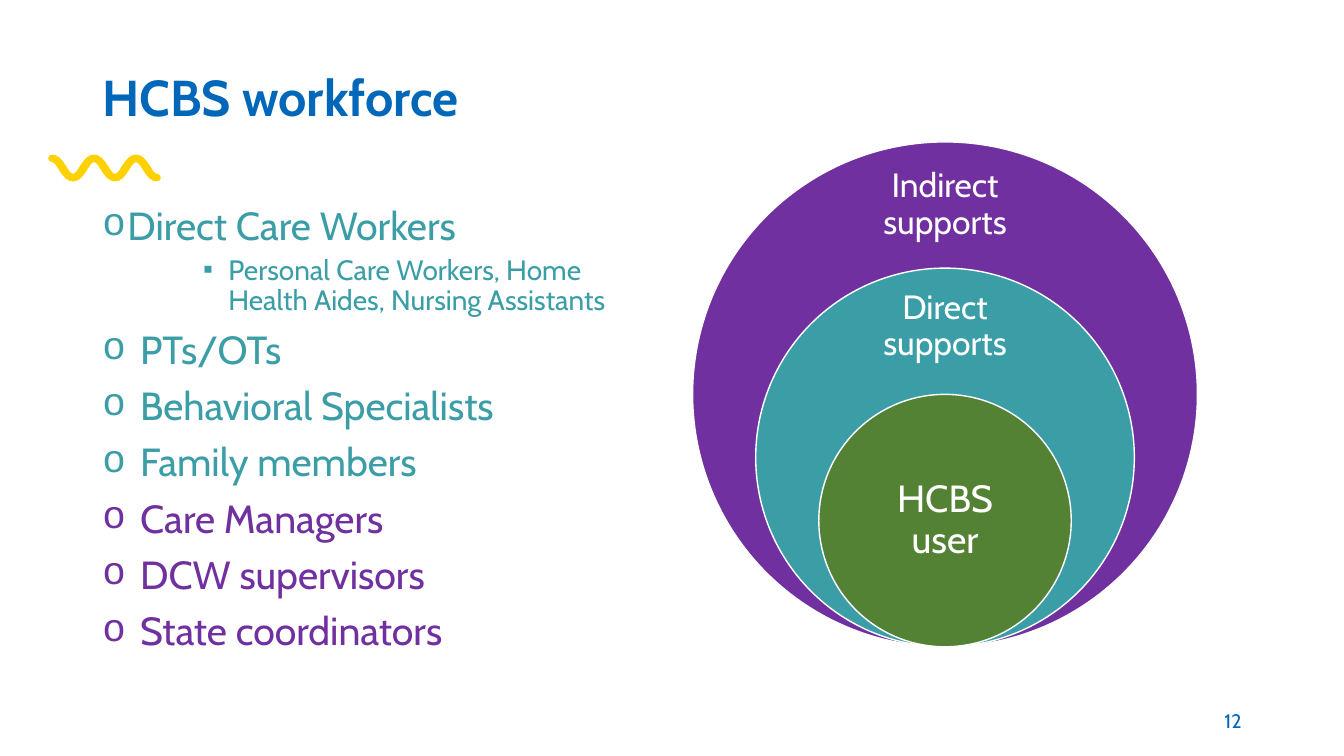
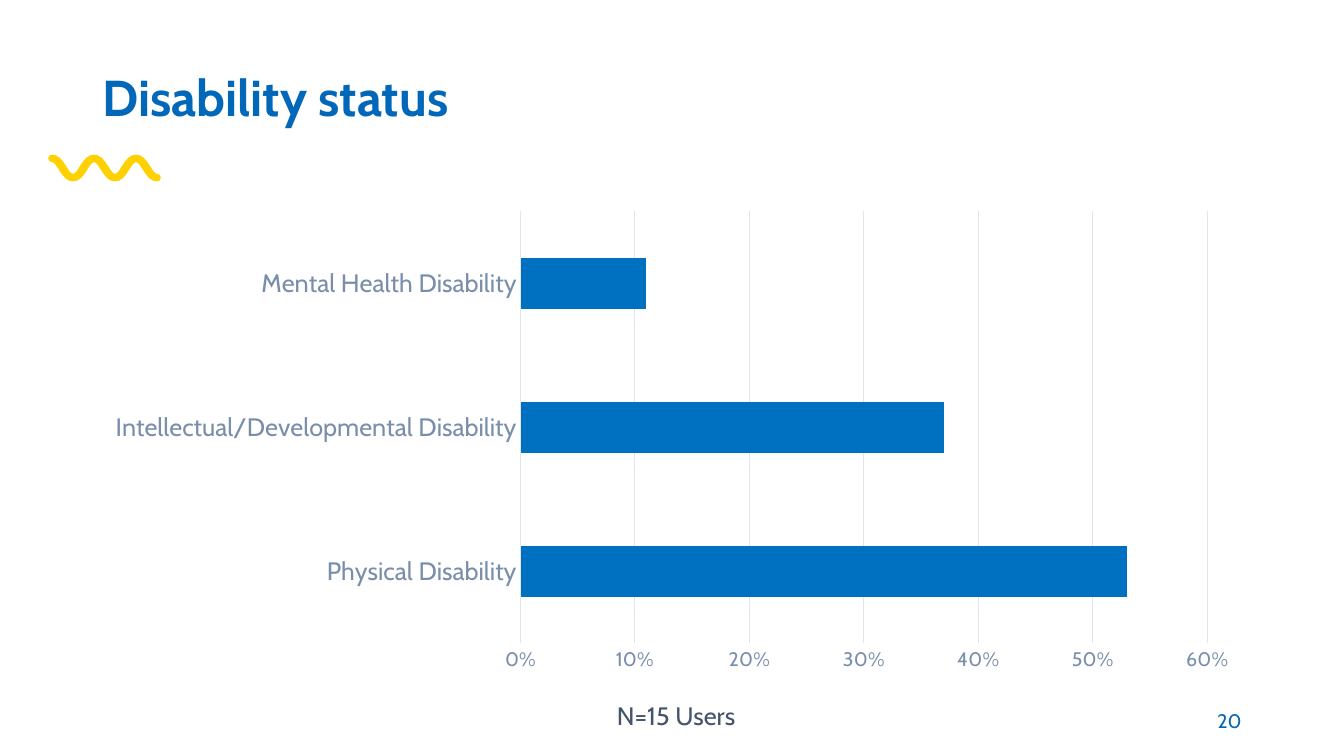
from dataclasses import dataclass

from lxml.etree import SubElement
from pptx import Presentation
from pptx.chart.data import CategoryChartData
from pptx.dml.color import RGBColor
from pptx.enum.chart import XL_CHART_TYPE as CHART, XL_TICK_MARK as TICK
from pptx.enum.shapes import MSO_SHAPE as SHAPE
from pptx.enum.text import MSO_ANCHOR as ANCHOR, PP_ALIGN as ALIGN
from pptx.oxml.ns import qn
from pptx.util import Emu, Inches, Pt

FONT = "Cabin"
BLUE, YELLOW, TEAL, PURPLE, GREEN = "0067B9", "FFD100", "3B9EA7", "7030A0", "548235"
WHITE, SLATE, MUTED, GRID, BAR = "FFFFFF", "44546A", "7A8EAA", "E0E5EB", "0070C0"

SLIDE_W, SLIDE_H = Inches(13.333), Inches(7.5)
ROWS = 18
CELL = SLIDE_H / ROWS

Point = tuple[float, float]


@dataclass(frozen=True)
class Box:
    col: float
    row: float
    cols: float
    rows: float

    def emu(self) -> list[Emu]:
        return [cells(n) for n in (self.col, self.row, self.cols, self.rows)]


@dataclass(frozen=True)
class Bullet:
    text: str
    color: str
    indent: float = 0.9
    hang: float = 0.9
    size: int = 28
    before: int = 10
    char: str = "o"
    char_font: str = "Courier New"


@dataclass(frozen=True)
class Ring:
    label: str
    color: str
    scale: float
    label_top: float
    label_height: float
    size: int
    inset: float


TITLE = Box(2.2, 0.96, 27.6, 2.2)
BODY = Box(2.2, 4.8, 13.78, 11.42)
CHART_AREA = Box(2.2, 4.8, 27.6, 11.42)
NOTE = Box(14.45, 16.56, 12.53, 0.96)
NUMBER = Box(22.6, 16.68, 7.2, 0.96)

BULLETS = [
    Bullet("Direct Care Workers", TEAL, indent=0.6, hang=0.6, before=0),
    Bullet("Personal Care Workers, Home Health Aides, Nursing Assistants", TEAL,
           3, 0.6, 20, 5, "▪", "Arial"),
    Bullet("PTs/OTs", TEAL),
    Bullet("Behavioral Specialists", TEAL),
    Bullet("Family members", TEAL),
    Bullet("Care Managers", PURPLE),
    Bullet("DCW supervisors", PURPLE),
    Bullet("State coordinators", PURPLE),
]

RING_CENTER, RING_BOTTOM, RING_SIZE, LABEL_WIDTH = 22.5, 15.4, 12.02, 4.2
RINGS = [
    Ring("Indirect supports", PURPLE, 1, 0.05, 0.15, 24, 0.45),
    Ring("Direct supports", TEAL, 0.75, 0.06, 0.19, 24, 0.45),
    Ring("HCBS user", GREEN, 0.5, 0.25, 0.5, 27, 0.5),
]

SHARES = {
    "Physical Disability": 0.53,
    "Intellectual/Developmental Disability": 0.37,
    "Mental Health Disability": 0.11,
}


def cells(n: float) -> Emu:
    return Emu(round(n * CELL))


def rgb(color: str) -> RGBColor:
    return RGBColor.from_string(color)


def set_font(font, size: int, color: str, bold: bool = False) -> None:
    font.name, font.size, font.bold = FONT, Pt(size), bold
    font.color.rgb = rgb(color)


def set_line(line, color: str, width: float) -> None:
    line.color.rgb = rgb(color)
    line.width = Pt(width)


def set_fill(sp, color: str) -> None:
    sp.shadow.inherit = False
    sp.fill.solid()
    sp.fill.fore_color.rgb = rgb(color)


def add_text(slide, box: Box, text: str, size: int, color: str, bold: bool = False,
             anchor=ANCHOR.TOP, align=ALIGN.LEFT, spacing: float = 1.0,
             inset: float | None = None) -> None:
    tf = slide.shapes.add_textbox(*box.emu()).text_frame
    tf.word_wrap = True
    tf.vertical_anchor = anchor
    if inset is not None:
        tf.margin_left = tf.margin_right = cells(inset)
        tf.margin_top = tf.margin_bottom = cells(inset)
    p = tf.paragraphs[0]
    p.text = text
    p.alignment, p.line_spacing = align, spacing
    set_font(p.runs[0].font, size, color, bold)


def add_curve_shape(slide, points: list[Point], color: str) -> None:
    start, *rest = [(cells(x), cells(y)) for x, y in points]
    builder = slide.shapes.build_freeform(*start)
    builder.add_line_segments(rest, close=True)
    sp = builder.convert_to_shape()
    outline = sp._element.find(".//" + qn("a:path"))
    lines = outline.findall(qn("a:lnTo"))
    for i in range(0, len(lines), 3):
        curve = SubElement(outline, qn("a:cubicBezTo"))
        for line in lines[i:i + 3]:
            curve.append(line[0])
            outline.remove(line)
    outline.append(outline.find(qn("a:close")))
    set_fill(sp, color)
    sp.line.fill.background()


def add_wave(slide, left: float = 1.24, middle: float = 4, half_wave: float = 0.5,
             height: float = 0.23, radius: float = 0.09, halves: int = 5) -> None:
    wide, narrow = 0.55 * half_wave, 0.25 * half_wave
    cap = radius * 4 / 3

    def edge(side: int, order: range, step: int) -> list[Point]:
        points = []
        for i in order:
            x0, x1 = left + i * half_wave, left + (i + step) * half_wave
            crest = -1 if i % 2 == 0 else 1
            y0 = middle + crest * height + side * radius
            y1 = middle - crest * height + side * radius
            h0, h1 = (wide, narrow) if crest == side else (narrow, wide)
            points += [(x0 + step * h0, y0), (x1 - step * h1, y1), (x1, y1)]
        return points

    right, top, bottom = left + halves * half_wave, middle - height, middle + height
    add_curve_shape(slide, [
        (left, top - radius),
        *edge(-1, range(halves), 1),
        (right + cap, bottom - radius), (right + cap, bottom + radius), (right, bottom + radius),
        *edge(1, range(halves, 0, -1), -1),
        (left - cap, top + radius), (left - cap, top - radius), (left, top - radius),
    ], YELLOW)


def add_slide(prs, title: str, number: int):
    slide = prs.slides.add_slide(prs.slide_layouts[6])
    add_wave(slide)
    add_text(slide, TITLE, title, 36, BLUE, True, ANCHOR.BOTTOM, spacing=0.9)
    add_text(slide, NUMBER, str(number), 14, BLUE, anchor=ANCHOR.MIDDLE, align=ALIGN.RIGHT)
    return slide


def add_bullets(slide, box: Box, bullets: list[Bullet]) -> None:
    tf = slide.shapes.add_textbox(*box.emu()).text_frame
    tf.word_wrap = True
    for i, bullet in enumerate(bullets):
        p = tf.add_paragraph() if i else tf.paragraphs[0]
        p.text = bullet.text
        pPr = p._p.get_or_add_pPr()
        pPr.set("marL", str(cells(bullet.indent)))
        pPr.set("indent", str(-cells(bullet.hang)))
        SubElement(pPr, qn("a:buFont")).set("typeface", bullet.char_font)
        SubElement(pPr, qn("a:buChar")).set("char", bullet.char)
        p.line_spacing = 0.9
        if bullet.before:
            p.space_before = Pt(bullet.before)
        set_font(p.runs[0].font, bullet.size, bullet.color)


def add_ring(slide, ring: Ring) -> None:
    size = RING_SIZE * ring.scale
    top = RING_BOTTOM - size
    circle = Box(RING_CENTER - size / 2, top, size, size)
    sp = slide.shapes.add_shape(SHAPE.OVAL, *circle.emu())
    set_fill(sp, ring.color)
    set_line(sp.line, WHITE, 1)
    label = Box(RING_CENTER - LABEL_WIDTH / 2, top + size * ring.label_top,
                LABEL_WIDTH, size * ring.label_height)
    add_text(slide, label, ring.label, ring.size, WHITE, anchor=ANCHOR.MIDDLE,
             align=ALIGN.CENTER, spacing=0.9, inset=ring.inset)


def add_bar_chart(slide, box: Box, shares: dict[str, float]) -> None:
    data = CategoryChartData(number_format="0%")
    data.categories = list(shares)
    data.add_series("Series 1", list(shares.values()))
    chart = slide.shapes.add_chart(CHART.BAR_CLUSTERED, *box.emu(), data).chart
    chart.has_legend = chart.has_title = False
    set_font(chart.font, 10, SLATE)

    plot = chart.plots[0]
    plot.gap_width = 182
    plot.vary_by_categories = False
    fill = plot.series[0].format.fill
    fill.solid()
    fill.fore_color.rgb = rgb(BAR)

    names, values = chart.category_axis, chart.value_axis
    for axis, size in ((names, 18), (values, 14)):
        axis.major_tick_mark = axis.minor_tick_mark = TICK.NONE
        set_font(axis.tick_labels.font, size, MUTED)
    names.has_major_gridlines = False
    set_line(names.format.line, GRID, 0.75)
    values.minimum_scale, values.maximum_scale, values.major_unit = 0, 0.6, 0.1
    values.has_major_gridlines = True
    set_line(values.major_gridlines.format.line, GRID, 0.75)
    values.format.line.fill.background()
    values.tick_labels.number_format = "0%"
    values.tick_labels.number_format_is_linked = False


def main() -> None:
    prs = Presentation()
    prs.slide_width, prs.slide_height = SLIDE_W, SLIDE_H

    workforce = add_slide(prs, "HCBS workforce", 12)
    add_bullets(workforce, BODY, BULLETS)
    for ring in RINGS:
        add_ring(workforce, ring)

    status = add_slide(prs, "Disability status", 20)
    add_bar_chart(status, CHART_AREA, SHARES)
    add_text(status, NOTE, "N=15 Users", 18, SLATE)

    prs.save("out.pptx")


if __name__ == "__main__":
    main()
